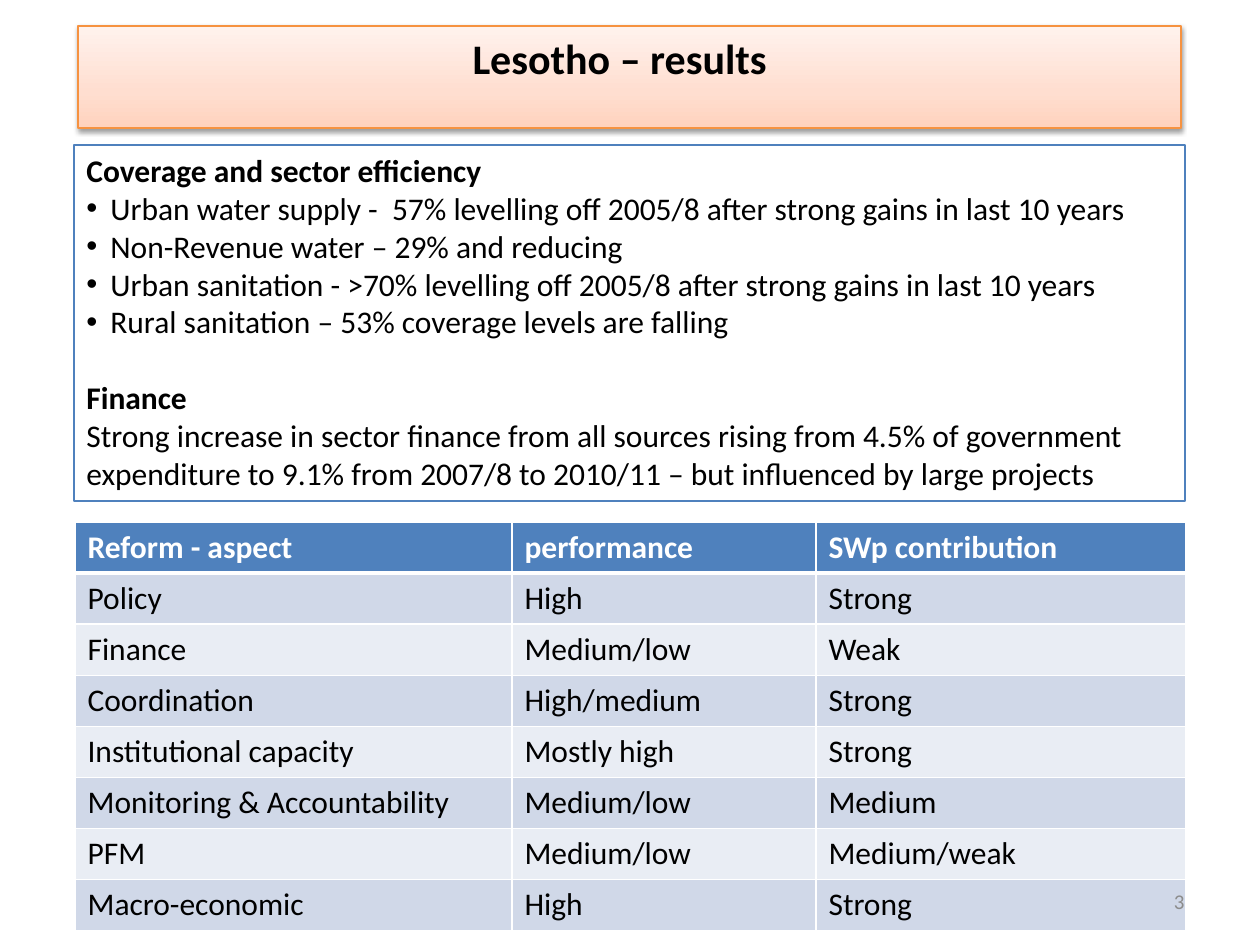
from copy import deepcopy

from lxml.etree import SubElement
from pptx import Presentation
from pptx.dml.color import RGBColor
from pptx.enum.shapes import MSO_SHAPE
from pptx.enum.text import MSO_ANCHOR, PP_ALIGN
from pptx.oxml import parse_xml
from pptx.oxml.ns import nsdecls, qn
from pptx.util import Emu, Pt

PX = 914400 / 126
FONT = "Calibri"
BLACK, WHITE, BLUE = "000000", "FFFFFF", "4F81BD"
BANDS = ("D0D8E8", "E9EDF4")

COVERAGE = [
    "Urban water supply -  57% levelling off 2005/8 after strong gains in last 10 years",
    "Non-Revenue water – 29% and reducing",
    "Urban sanitation - >70% levelling off 2005/8 after strong gains in last 10 years",
    "Rural sanitation – 53% coverage levels are falling",
]
FINANCE = (
    "Strong increase in sector finance from all sources rising from 4.5% of government "
    "expenditure to 9.1% from 2007/8 to 2010/11 – but influenced by large projects"
)
REFORMS = [
    ("Reform - aspect", "performance", "SWp contribution"),
    ("Policy", "High", "Strong"),
    ("Finance", "Medium/low", "Weak"),
    ("Coordination", "High/medium", "Strong"),
    ("Institutional capacity", "Mostly high", "Strong"),
    ("Monitoring & Accountability", "Medium/low", "Medium"),
    ("PFM", "Medium/low", "Medium/weak"),
    ("Macro-economic", "High", "Strong"),
]


def px(length):
    return Emu(round(length * PX))


def color(value):
    return RGBColor.from_string(value)


def write(para, text, size=18, tint=BLACK, bold=False, align=PP_ALIGN.LEFT):
    para.text = text
    para.alignment = align
    font = para.font
    font.name, font.size, font.bold = FONT, Pt(size), bold
    font.color.rgb = color(tint)


def add_bullet(para):
    properties = para._p.get_or_add_pPr()
    properties.set("marL", str(px(24)))
    properties.set("indent", str(-px(24)))
    SubElement(properties, qn("a:buFont")).set("typeface", "Arial")
    SubElement(properties, qn("a:buChar")).set("char", "•")
    # Bullets must come before the default run properties
    properties.append(properties.find(qn("a:defRPr")))


def add_box(page, left, top, width, height, outline):
    box = page.shapes.add_shape(
        MSO_SHAPE.RECTANGLE, px(left), px(top), px(width), px(height))
    box.shadow.inherit = False
    box.fill.background()
    box.line.color.rgb = color(outline)
    box.line.width = Pt(0.75)
    box.text_frame.word_wrap = True
    box.text_frame.vertical_anchor = MSO_ANCHOR.TOP
    return box


def fill_gradient(box, stops):
    box.fill.gradient()
    box.fill.gradient_angle = 90
    stop_list = box._element.spPr.find(".//" + qn("a:gsLst"))
    while len(stop_list) < len(stops):
        stop_list.append(deepcopy(stop_list[0]))
    for stop, (position, tint) in zip(box.fill.gradient_stops, stops):
        stop.position = position
        stop.color.rgb = color(tint)


def add_shadow(box):
    effects = box._element.spPr.find(qn("a:effectLst"))
    effects.append(parse_xml(
        f'<a:outerShdw {nsdecls("a")} blurRad="{Pt(3.1)}" dist="{Pt(1.6)}" '
        f'dir="5400000" rotWithShape="0"><a:srgbClr val="{BLACK}">'
        '<a:alpha val="38000"/></a:srgbClr></a:outerShdw>'))


def add_title(page):
    box = add_box(page, 78, 26, 1103, 102, "F69240")
    fill_gradient(box, [(0, "FFD2BD"), (0.35, "FFDED0"), (1, "FFF2ED")])
    add_shadow(box)
    box.text_frame.margin_right = px(32)
    write(box.text_frame.paragraphs[0], "Lesotho – results", 24, bold=True,
          align=PP_ALIGN.CENTER)


def add_findings(page):
    frame = add_box(page, 74, 145, 1111, 356, BLUE).text_frame
    write(frame.paragraphs[0], "Coverage and sector efficiency", bold=True)
    for text in COVERAGE:
        para = frame.add_paragraph()
        write(para, text)
        add_bullet(para)
    heading = frame.add_paragraph()
    write(heading, "Finance", bold=True)
    heading.space_before = Pt(21.6)
    write(frame.add_paragraph(), FINANCE)


def set_borders(cell, widths):
    properties = cell._tc.get_or_add_tcPr()
    for index, (side, width) in enumerate(widths.items()):
        properties.insert(index, parse_xml(
            f'<a:ln{side} {nsdecls("a")} w="{Pt(width)}"><a:solidFill>'
            f'<a:srgbClr val="{WHITE}"/></a:solidFill></a:ln{side}>'))


def add_reforms(page):
    widths, row_height = (437, 304, 370), 51
    table = page.shapes.add_table(
        len(REFORMS), len(widths), px(75), px(522),
        px(sum(widths)), px(row_height * len(REFORMS))).table
    for column, width in zip(table.columns, widths):
        column.width = px(width)
    for r, texts in enumerate(REFORMS):
        header = r == 0
        table.rows[r].height = px(row_height)
        for c, text in enumerate(texts):
            cell = table.cell(r, c)
            cell.fill.solid()
            cell.fill.fore_color.rgb = color(BLUE if header else BANDS[(r - 1) % 2])
            set_borders(cell, {"L": 1, "R": 1, "T": 3 if r == 1 else 1,
                               "B": 3 if header else 1})
            write(cell.text_frame.paragraphs[0], text,
                  tint=WHITE if header else BLACK, bold=header)


def add_page_number(page):
    frame = page.shapes.add_textbox(px(903), px(876), px(294), px(50)).text_frame
    frame.word_wrap = True
    frame.vertical_anchor = MSO_ANCHOR.MIDDLE
    write(frame.paragraphs[0], "3", 12, "8C8C8C", align=PP_ALIGN.RIGHT)


def main():
    deck = Presentation()
    deck.slide_width, deck.slide_height = px(1260), px(945)
    page = deck.slides.add_slide(deck.slide_layouts[6])
    add_title(page)
    add_findings(page)
    add_reforms(page)
    add_page_number(page)
    deck.save("out.pptx")


if __name__ == "__main__":
    main()
